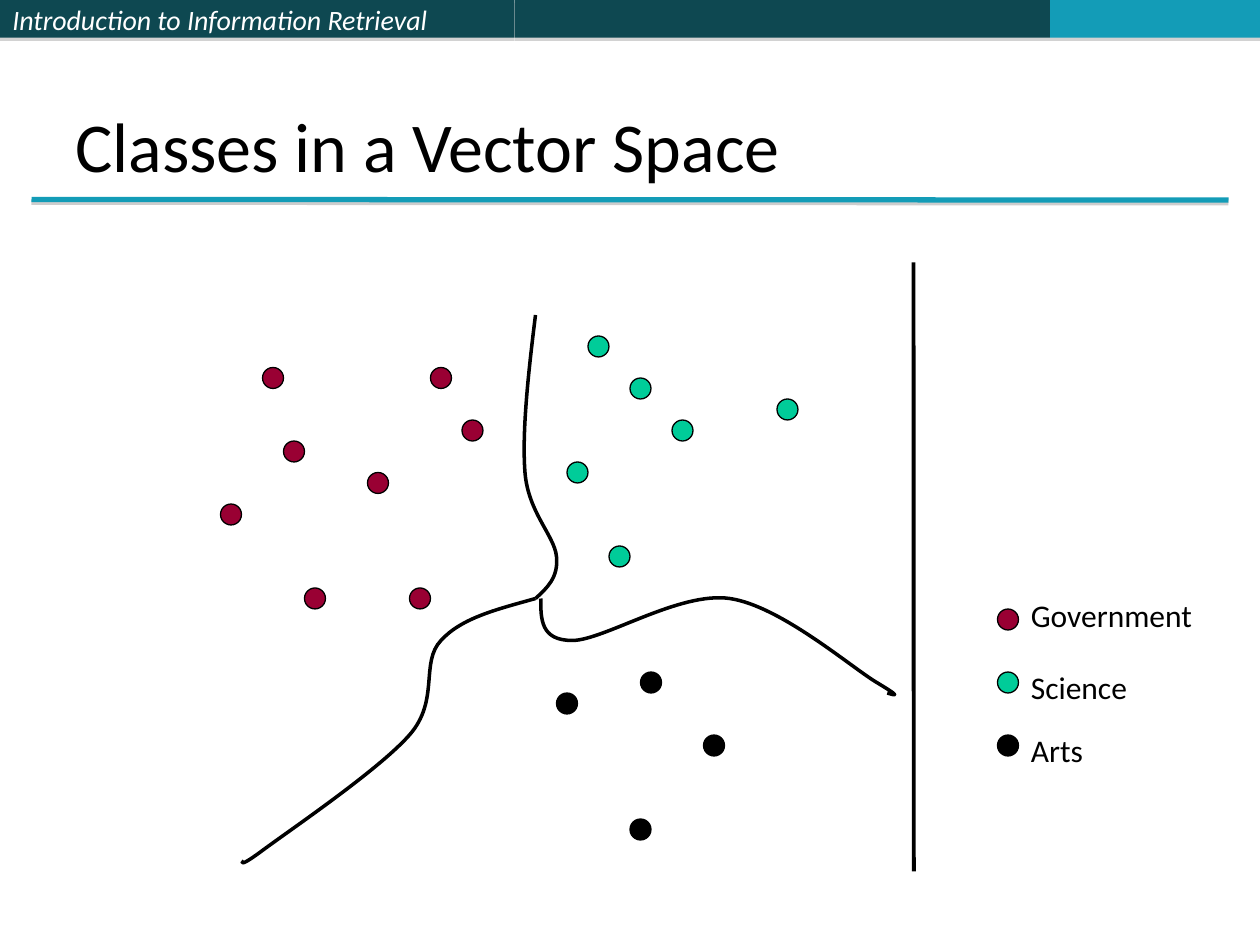
from lxml import etree
from pptx import Presentation
from pptx.dml.color import RGBColor
from pptx.enum.shapes import MSO_CONNECTOR, MSO_SHAPE
from pptx.enum.text import MSO_ANCHOR, PP_ALIGN
from pptx.oxml.ns import qn
from pptx.util import Inches, Pt

OVAL, RECT = MSO_SHAPE.OVAL, MSO_SHAPE.RECTANGLE
LINE = MSO_CONNECTOR.STRAIGHT
TOP, MIDDLE, BOTTOM = MSO_ANCHOR.TOP, MSO_ANCHOR.MIDDLE, MSO_ANCHOR.BOTTOM
LEFT = PP_ALIGN.LEFT
BLACK = RGBColor(0, 0, 0)
WHITE = RGBColor(255, 255, 255)
DARK = RGBColor(0x0E, 0x48, 0x51)
TEAL = RGBColor(0x13, 0x9C, 0xB7)
CELL = Inches(1) / 12
DOT = 2

CLASSES = [
    ("Government", RGBColor(0x99, 0, 0x33),
     [(5, 10), (7, 17), (9, 31), (21, 10), (1, 23), (15, 20), (24, 15), (19, 31)]),
    ("Science", RGBColor(0, 0xCC, 0x99),
     [(34, 19), (36, 7), (38, 27), (40, 11), (54, 13), (44, 15)]),
    ("Arts", BLACK, [(41, 39), (33, 41), (40, 53), (47, 45)]),
]
LABELS = [(0.2, 18), (7, 11.8), (13, 7.4)]
BORDERS = [
    [(31, 32), (27.5, 33), (24, 33.8), (22, 36), (20, 38.1), (21.9, 41.7),
     (19, 45), (16.1, 48.3), (7.7, 54), (5, 56), (2.3, 58), (3.3, 56.8), (3, 57)],
    [(31, 32), (32.1, 31), (33.2, 30), (33, 28), (32.8, 26), (30.3, 23.8),
     (30, 20), (29.7, 16.2), (30.3, 10.6), (31, 5)],
    [(31.5, 32), (31.5, 34), (31.5, 36), (34.5, 36), (37.5, 36), (44.7, 31.3),
     (49.5, 32), (54.3, 32.7), (61, 38.5), (63.5, 40), (66, 41.5), (65.2, 41.2),
     (64.5, 41)],
]


def grid(*cells):
    """Turn grid cells into slide lengths."""
    return [round(c * CELL) for c in cells]


def shade(shape, alpha=0, drop=0):
    """Give a shape a grey drop shadow, or none when alpha is zero."""
    props = shape._element.spPr
    effects = etree.SubElement(props, qn("a:effectLst"))
    if alpha:
        shadow = etree.SubElement(effects, qn("a:outerShdw"), blurRad="0",
                                  dist=str(Pt(drop)), dir="5400000", rotWithShape="0")
        color = etree.SubElement(shadow, qn("a:srgbClr"), val="808080")
        etree.SubElement(color, qn("a:alpha"), val=str(alpha * 1000))


def write(shape, text, size, color, anchor, italic=False, wrap=True):
    """Put one line of styled text in a shape."""
    frame = shape.text_frame
    frame.text = text
    frame.word_wrap = wrap
    frame.vertical_anchor = anchor
    para = frame.paragraphs[0]
    para.alignment = LEFT
    font = para.runs[0].font
    font.name, font.size, font.italic = "Calibri", Pt(size), italic
    font.color.rgb = color


def rule(slide, start, end, color, width):
    """Draw a straight line between two grid points."""
    line = slide.shapes.add_connector(LINE, *grid(*start, *end))
    line.line.color.rgb = color
    line.line.width = Pt(width)
    return line


def dot(slide, x, y, color):
    """Draw one document as a dot."""
    mark = slide.shapes.add_shape(OVAL, *grid(x, y, DOT, DOT))
    mark.shadow.inherit = False
    mark.fill.solid()
    mark.fill.fore_color.rgb = color
    mark.line.color.rgb = BLACK
    mark.line.width = Pt(0.75)


def bend(slide, knots):
    """Draw a chain of cubic curves through every third knot."""
    points = [grid(*knot) for knot in knots]
    pen = slide.shapes.build_freeform(*points[0])
    pen.add_line_segments(points[1:], close=False)
    curve = pen.convert_to_shape()
    legs = list(curve._element.iter(qn("a:lnTo")))
    for i in range(0, len(legs), 3):
        cubic = etree.Element(qn("a:cubicBezTo"))
        legs[i].addprevious(cubic)
        for leg in legs[i:i + 3]:
            cubic.append(leg[0])
            leg.getparent().remove(leg)
    curve.shadow.inherit = False
    curve.fill.background()
    curve.line.color.rgb = BLACK
    curve.line.width = Pt(2)


def header(slide, box):
    """Draw the banner of three bars with the course name."""
    left, top, width, height = box
    bars = []
    for start, end, color in ((0, 49, DARK), (49, 100, DARK), (100, width, TEAL)):
        bar = slide.shapes.add_shape(RECT, *grid(left + start, top, end - start, height))
        bar.fill.solid()
        bar.fill.fore_color.rgb = color
        bar.line.fill.background()
        shade(bar, 35, 1.8)
        bars.append(bar)
    write(bars[0], "Introduction to Information Retrieval", 16, WHITE, MIDDLE, italic=True)


def title(slide, box):
    """Place the heading and the rule below it."""
    left, top, width, height = box
    base = top + height
    shade(rule(slide, (left, base), (left + width, base + 0.05), TEAL, 3), 38, 1.6)
    head = slide.shapes.add_textbox(*grid(left + 3, top, width - 6, height - 0.6))
    write(head, "Classes in a Vector Space", 40, BLACK, BOTTOM)


def plot(slide, box):
    """Draw the documents, the right edge and the class borders."""
    left, top, width, height = box
    for _, color, spots in CLASSES:
        for x, y in spots:
            dot(slide, left + x, top + y, color)
    side = left + width
    shade(rule(slide, (side, top), (side + 0.03, top + height), BLACK, 2.25))
    for knots in BORDERS:
        bend(slide, [(left + x, top + y) for x, y in knots])


def legend(slide, box):
    """List each class beside its dot."""
    left, top, width, height = box
    step = height / len(CLASSES)
    for row, ((name, color, _), (drop, span)) in enumerate(zip(CLASSES, LABELS)):
        dot(slide, left, top + row * step + 2, color)
        label = slide.shapes.add_textbox(*grid(left + DOT, top + drop, span, 4.8))
        write(label, name, 18, BLACK, TOP, wrap=False)


def main():
    """Build the slide and save it."""
    deck = Presentation()
    deck.slide_width, deck.slide_height = Inches(10), Inches(7.5)
    slide = deck.slides.add_slide(deck.slide_layouts[6])
    header(slide, (0, 0, 120, 3.6))
    title(slide, (3, 1.3, 114, 17.7))
    plot(slide, (20, 25, 67, 58))
    legend(slide, (95, 56, 20, 18))
    deck.save("out.pptx")


if __name__ == "__main__":
    main()
